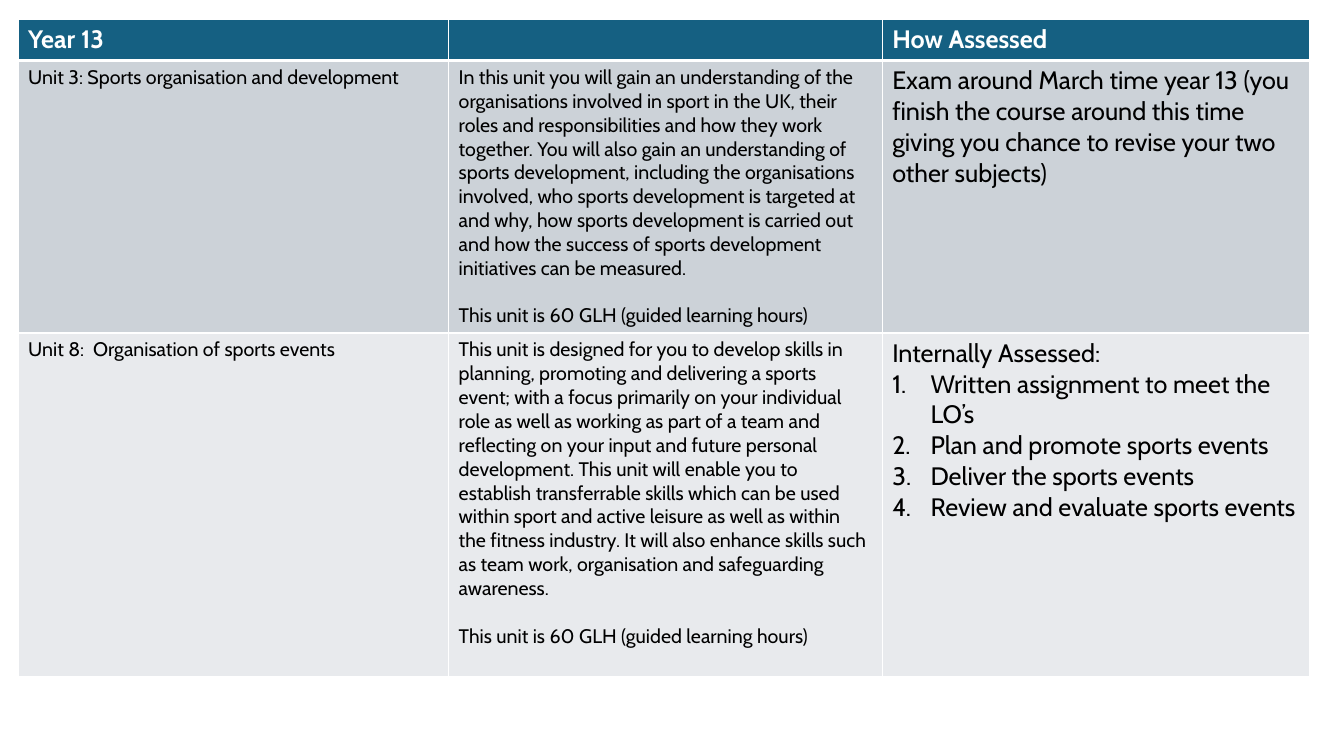
from dataclasses import dataclass

from lxml import etree
from pptx import Presentation
from pptx.dml.color import RGBColor
from pptx.oxml.ns import qn
from pptx.table import _Cell
from pptx.text.text import TextFrame
from pptx.util import Emu, Pt

PX = 9144  # EMU per px, 100 px to the inch
BLANK_LAYOUT = 6


@dataclass(frozen=True)
class Theme:
    font: str = "Cabin"
    header_fill: str = "156082"
    band_fills: tuple[str, str] = ("CCD2D8", "E8EAED")
    header_text: str = "FFFFFF"
    body_text: str = "000000"
    border: str = "FFFFFF"
    large: int = 18
    small: int = 14
    gap: int = 17
    thin: int = 1
    thick: int = 3


@dataclass(frozen=True)
class Unit:
    title: str
    summary: str
    hours: str
    assessment: str
    steps: tuple[str, ...] = ()


THEME = Theme()
LEFT, TOP = 18, 19
COLUMN_WIDTHS = (427, 430, 424)
ROW_HEIGHTS = (41, 270, 341)
STEP_INDENT = 38
HEADINGS = ("Year 13", "", "How Assessed")
GUIDED_HOURS = "This unit is 60 GLH (guided learning hours)"
UNITS = (
    Unit(
        "Unit 3: Sports organisation and development",
        "In this unit you will gain an understanding of the organisations involved in sport "
        "in the UK, their roles and responsibilities and how they work together. You will "
        "also gain an understanding of sports development, including the organisations "
        "involved, who sports development is targeted at and why, how sports development is "
        "carried out and how the success of sports development initiatives can be measured.",
        GUIDED_HOURS,
        "Exam around March time year 13 (you finish the course around this time giving you "
        "chance to revise your two other subjects)",
    ),
    Unit(
        "Unit 8:  Organisation of sports events",
        "This unit is designed for you to develop skills in planning, promoting and "
        "delivering a sports event; with a focus primarily on your individual role as well "
        "as working as part of a team and reflecting on your input and future personal "
        "development. This unit will enable you to establish transferrable skills which can "
        "be used within sport and active leisure as well as within the fitness industry. It "
        "will also enhance skills such as team work, organisation and safeguarding awareness.",
        GUIDED_HOURS,
        "Internally Assessed:",
        (
            "Written assignment to meet the LO’s",
            "Plan and promote sports events",
            "Deliver the sports events",
            "Review and evaluate sports events",
        ),
    ),
)


def px(length: int) -> Emu:
    return Emu(length * PX)


def add_text(tf: TextFrame, text: str, *, size: int, color: str = THEME.body_text,
             bold: bool = False, gap: int = 0, numbered: bool = False) -> None:
    """Fill the first paragraph if it is still empty, otherwise append one."""
    p = tf.paragraphs[0] if not tf.text else tf.add_paragraph()
    p.space_before = Pt(gap)
    if numbered:
        pPr = p._p.get_or_add_pPr()
        pPr.set("marL", str(px(STEP_INDENT)))
        pPr.set("indent", str(-px(STEP_INDENT)))
        etree.SubElement(pPr, qn("a:buFont"), typeface="+mj-lt")
        etree.SubElement(pPr, qn("a:buAutoNum"), type="arabicPeriod")
    r = p.add_run()
    r.text = text
    r.font.name = THEME.font
    r.font.size = Pt(size)
    r.font.bold = bold
    r.font.color.rgb = RGBColor.from_string(color)


def style_cell(cell: _Cell, fill: str, *, top: int = THEME.thin,
               bottom: int = THEME.thin) -> None:
    tcPr = cell._tc.get_or_add_tcPr()
    widths = {"lnL": THEME.thin, "lnR": THEME.thin, "lnT": top, "lnB": bottom}
    for side, width in widths.items():
        ln = etree.SubElement(tcPr, qn(f"a:{side}"), w=str(Pt(width)))
        solid = etree.SubElement(ln, qn("a:solidFill"))
        etree.SubElement(solid, qn("a:srgbClr"), val=THEME.border)
    cell.fill.solid()
    cell.fill.fore_color.rgb = RGBColor.from_string(fill)


def fill_header(cells: list[_Cell]) -> None:
    for cell, heading in zip(cells, HEADINGS):
        style_cell(cell, THEME.header_fill, bottom=THEME.thick)
        if heading:
            add_text(cell.text_frame, heading, size=THEME.large,
                     color=THEME.header_text, bold=True)


def fill_unit(cells: list[_Cell], unit: Unit, fill: str, top: int) -> None:
    for cell in cells:
        style_cell(cell, fill, top=top)
    title, summary, assessment = (cell.text_frame for cell in cells)
    add_text(title, unit.title, size=THEME.small)
    add_text(summary, unit.summary, size=THEME.small)
    add_text(summary, unit.hours, size=THEME.small, gap=THEME.gap)
    add_text(assessment, unit.assessment, size=THEME.large)
    for step in unit.steps:
        add_text(assessment, step, size=THEME.large, numbered=True)


def main() -> None:
    prs = Presentation()
    prs.slide_width, prs.slide_height = px(1333), px(750)
    slide = prs.slides.add_slide(prs.slide_layouts[BLANK_LAYOUT])
    table = slide.shapes.add_table(
        len(ROW_HEIGHTS), len(COLUMN_WIDTHS), px(LEFT), px(TOP),
        px(sum(COLUMN_WIDTHS)), px(sum(ROW_HEIGHTS)),
    ).table
    for column, width in zip(table.columns, COLUMN_WIDTHS):
        column.width = px(width)
    for row, height in zip(table.rows, ROW_HEIGHTS):
        row.height = px(height)

    header, *unit_rows = (list(row.cells) for row in table.rows)
    fill_header(header)
    tops = (THEME.thick, THEME.thin)
    for cells, unit, fill, top in zip(unit_rows, UNITS, THEME.band_fills, tops):
        fill_unit(cells, unit, fill, top)
    prs.save("out.pptx")


if __name__ == "__main__":
    main()
